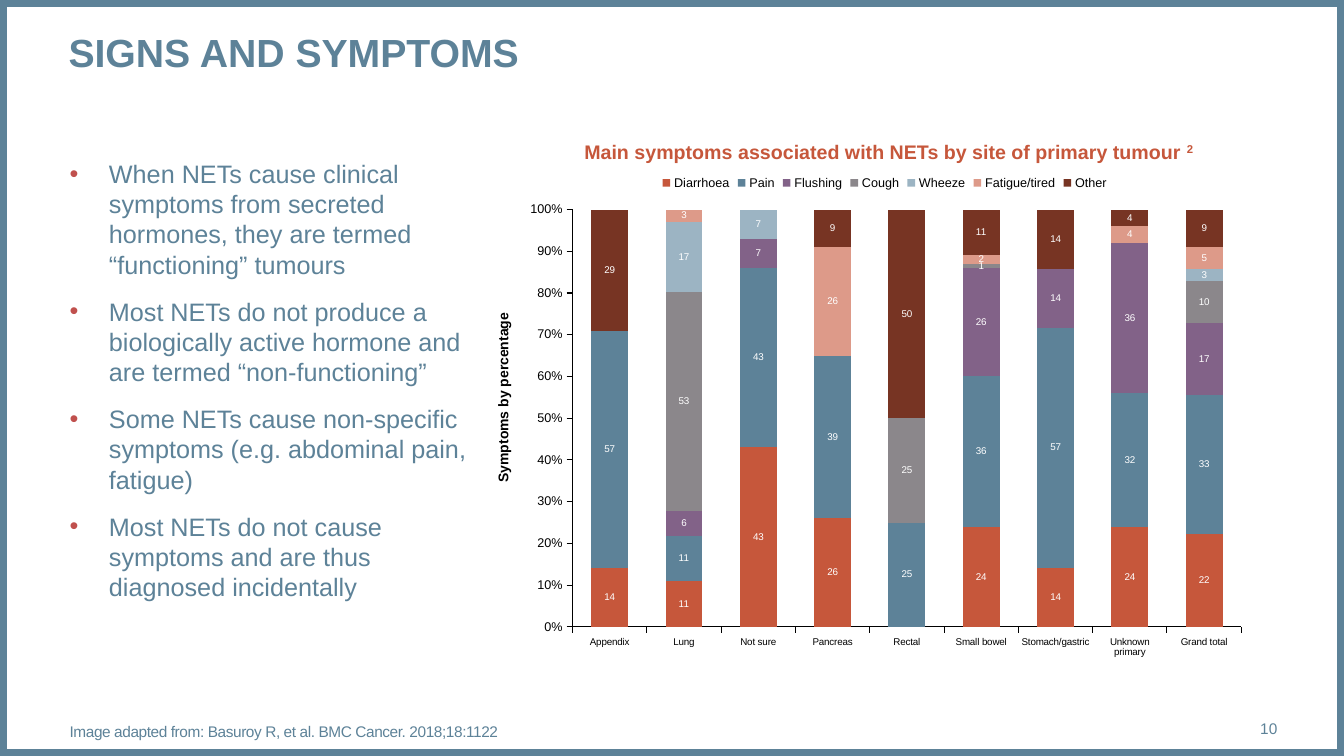
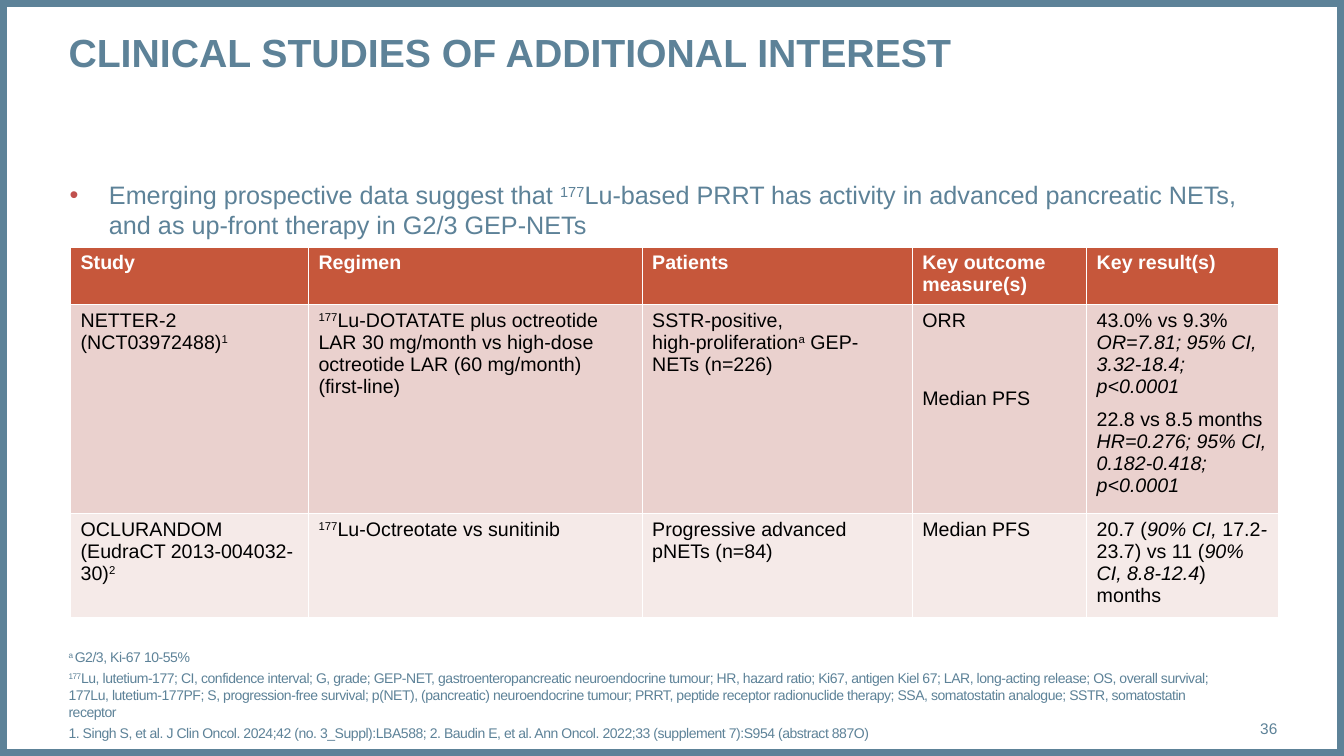
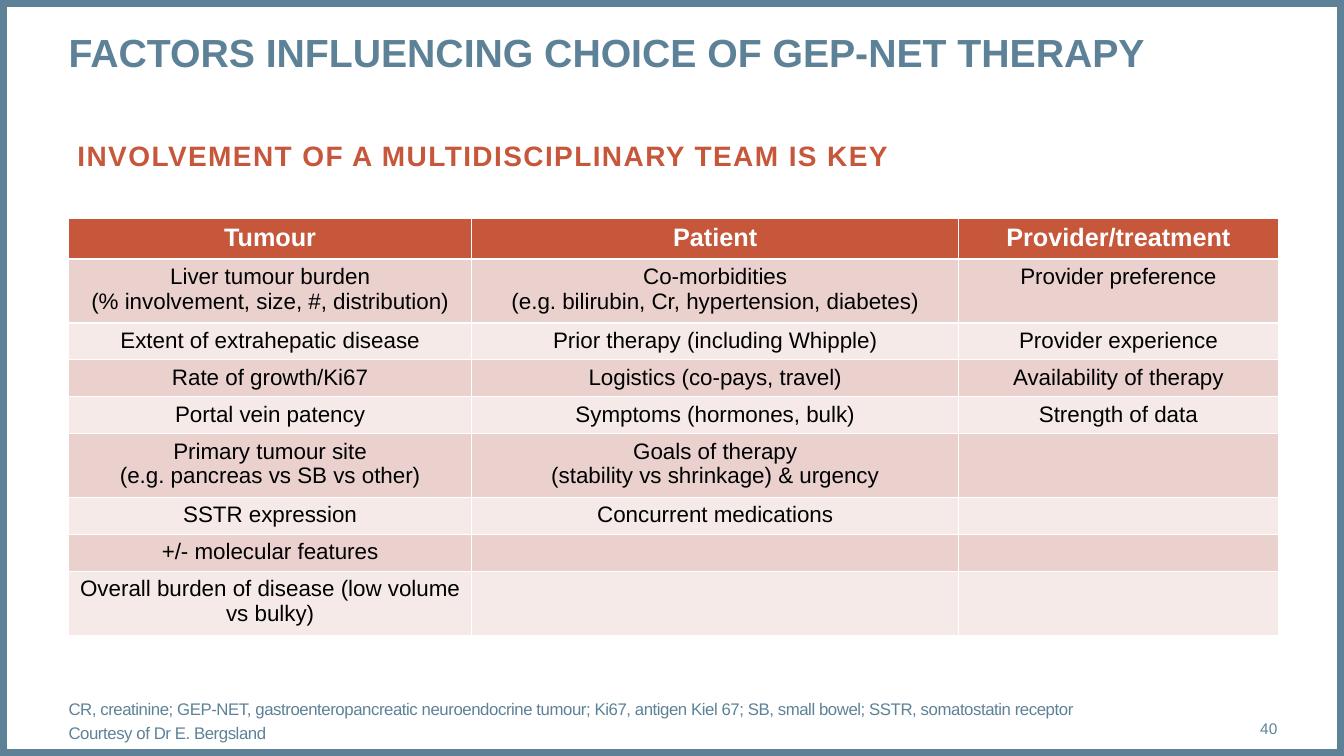
from copy import deepcopy
from lxml.etree import SubElement
from pptx import Presentation
from pptx.chart.data import CategoryChartData
from pptx.dml.color import RGBColor
from pptx.enum.chart import XL_CHART_TYPE as ChartType, XL_LABEL_POSITION as LabelPosition
from pptx.enum.chart import XL_LEGEND_POSITION as LegendPosition, XL_TICK_MARK as TickMark
from pptx.enum.shapes import MSO_SHAPE as Preset
from pptx.enum.text import MSO_ANCHOR as Anchor, MSO_AUTO_SIZE as AutoSize, PP_ALIGN as Align
from pptx.oxml.ns import qn
from pptx.util import Inches, Pt

COLORS = {
    "slate": "5D8298", "rust": "C6573B", "bullet": "C0504D", "black": "000000", "white": "FFFFFF",
    "band": "EAD1CE", "pale": "F5EAE8", "purple": "826288", "gray": "8B878B", "sky": "9CB4C3",
    "salmon": "DD9A89", "brown": "773423",
}
RGB = {name: RGBColor.from_string(value) for name, value in COLORS.items()}
FONT = "Arial"

presentation = Presentation()
presentation.slide_width, presentation.slide_height = Inches(13.33), Inches(7.5)
COLUMN = presentation.slide_width / 100
ROW = presentation.slide_height / 100


def place(left, top, width, height):
    return [round(value) for value in (left * COLUMN, top * ROW, width * COLUMN, height * ROW)]


def write(frame, text, size, color="slate", bold=False, align=Align.LEFT, before=0, tracking=0, bullet=False):
    for index, line in enumerate(text.split("\n")):
        paragraph = frame.paragraphs[0] if index == 0 else frame.add_paragraph()
        paragraph.alignment = align
        paragraph.space_before = Pt(before if index else 0)
        if bullet:
            properties = paragraph._p.get_or_add_pPr()
            properties.set("marL", str(Inches(0.39)))
            properties.set("indent", str(-Inches(0.39)))
            tint = SubElement(properties, qn("a:buClr"))
            SubElement(tint, qn("a:srgbClr")).set("val", COLORS["bullet"])
            SubElement(properties, qn("a:buFont")).set("typeface", FONT)
            SubElement(properties, qn("a:buChar")).set("char", "•")
        for raised, part in enumerate(line.split("^")):
            for slanted, piece in enumerate(part.split("~")):
                for row, words in enumerate(piece.split("\v")):
                    if row:
                        paragraph.add_line_break()
                    if not words:
                        continue
                    run = paragraph.add_run()
                    run.text = words
                    values = {"name": FONT, "size": Pt(size), "bold": bold, "italic": slanted % 2 == 1}
                    for name, value in values.items():
                        setattr(run.font, name, value)
                    run.font.color.rgb = RGB[color]
                    if raised % 2:
                        run.font._element.set("baseline", "30000")
                    if tracking:
                        run.font._element.set("spc", str(round(tracking * 100)))
        for line_break in paragraph._p.findall(qn("a:br")):
            line_break.append(deepcopy(paragraph.runs[0].font._element))
        paragraph._p.get_or_add_endParaRPr().set("sz", str(size * 100))


layout = presentation.slide_layouts[5]
pages = [
    ("SIGNS AND SYMPTOMS", "10"),
    ("CLINICAL STUDIES OF ADDITIONAL INTEREST", "36"),
    ("FACTORS INFLUENCING CHOICE OF GEP-NET THERAPY", "40"),
]
slides = []
for heading, number in pages:
    slide = presentation.slides.add_slide(layout)
    slides.append(slide)
    title = slide.shapes.title
    title.left, title.top, title.width, title.height = place(5.1, 3.73, 89.95, 12.53)
    page_number = slide.shapes.add_textbox(*place(88.6, 93.73, 6.45, 5.33))
    for shape, anchor in ((title, Anchor.TOP), (page_number, Anchor.MIDDLE)):
        frame = shape.text_frame
        values = {"word_wrap": True, "auto_size": AutoSize.NONE, "vertical_anchor": anchor,
                  "margin_left": 0, "margin_top": 0, "margin_right": 0, "margin_bottom": 0}
        for name, value in values.items():
            setattr(frame, name, value)
    write(title.text_frame, heading, 28, bold=True)
    write(page_number.text_frame, number, 11, align=Align.RIGHT)

border = slides[0].shapes.add_shape(Preset.RECTANGLE, *place(0, 0, 100, 100))
border.shadow.inherit = False
border.fill.background()
border.line.color.rgb = RGB["slate"]
border.line.width = Pt(10)
layout.shapes.element.insert(2, border.element)

symptoms, studies, factors = slides

text_boxes = [
    (symptoms, (5.18, 20.93, 30.1, 66), Anchor.TOP, 0,
     "When NETs cause clinical symptoms from secreted hormones, they are termed “functioning” tumours\n"
     "Most NETs do not produce a biologically active hormone and are termed “non-functioning”\n"
     "Some NETs cause non-specific symptoms (e.g. abdominal pain, fatigue)\n"
     "Most NETs do not cause symptoms and are thus diagnosed incidentally",
     {"size": 18, "before": 12, "bullet": True}),
    (symptoms, (5.18, 92.67, 83.5, 5.33), Anchor.BOTTOM, 0,
     "Image adapted from: Basuroy R, et al. BMC Cancer. 2018;18:1122",
     {"size": 11, "tracking": -0.3}),
    (symptoms, (39.76, 17.87, 52.74, 4.53), Anchor.TOP, 1,
     "Main symptoms associated with NETs by site of primary tumour ^2^",
     {"size": 14, "color": "rust", "bold": True, "align": Align.CENTER}),
    (studies, (5.18, 23.73, 89.95, 8.5), Anchor.TOP, 0,
     "Emerging prospective data suggest that ^177^Lu-based PRRT has activity in advanced pancreatic NETs, "
     "and as up-front therapy in G2/3 GEP-NETs",
     {"size": 18, "bullet": True}),
    (studies, (5.1, 92.67, 85.67, 5.33), Anchor.BOTTOM, 0,
     "^a ^G2/3, Ki-67 10-55%\n"
     "^177^Lu, lutetium-177; CI, confidence interval; G, grade; GEP-NET, gastroenteropancreatic "
     "neuroendocrine tumour; HR, hazard ratio; Ki67, antigen Kiel 67; LAR, long-acting release; "
     "OS, overall survival; 177Lu, lutetium-177PF; S, progression-free survival; p(NET), (pancreatic) "
     "neuroendocrine tumour; PRRT, peptide receptor radionuclide therapy; SSA, somatostatin analogue; "
     "SSTR, somatostatin receptor\n"
     "1. Singh S, et al. J Clin Oncol. 2024;42 (no. 3_Suppl):LBA588; 2. Baudin E, et al. Ann Oncol. "
     "2022;33 (supplement 7):S954 (abstract 887O)",
     {"size": 10, "before": 3, "tracking": -0.3}),
    (factors, (5.03, 17.73, 90, 10.27), Anchor.TOP, 1,
     "INVOLVEMENT OF A MULTIDISCIPLINARY TEAM IS KEY",
     {"size": 20, "color": "rust", "bold": True, "tracking": 1}),
    (factors, (5.1, 92.67, 83.5, 5.33), Anchor.MIDDLE, 0,
     "CR, creatinine; GEP-NET, gastroenteropancreatic neuroendocrine tumour; Ki67, antigen Kiel 67; "
     "SB, small bowel; SSTR, somatostatin receptor\n"
     "Courtesy of Dr E. Bergsland",
     {"size": 12, "before": 3, "tracking": -0.3}),
]
for slide, area, anchor, padding, text, style in text_boxes:
    frame = slide.shapes.add_textbox(*place(*area)).text_frame
    frame.word_wrap = True
    frame.vertical_anchor = anchor
    frame.margin_left = frame.margin_right = Inches(0.1) * padding
    frame.margin_top = frame.margin_bottom = Inches(0.05) * padding
    write(frame, text, **style)

chart_data = CategoryChartData()
chart_data.categories = ["Appendix", "Lung", "Not sure", "Pancreas", "Rectal", "Small bowel",
                         "Stomach/gastric", "Unknown primary", "Grand total"]
symptom_series = [
    ("Diarrhoea", "rust", (14, 11, 43, 26, 0, 24, 14, 24, 22)),
    ("Pain", "slate", (57, 11, 43, 39, 25, 36, 57, 32, 33)),
    ("Flushing", "purple", (0, 6, 7, 0, 0, 26, 14, 36, 17)),
    ("Cough", "gray", (0, 53, 0, 0, 25, 1, 0, 0, 10)),
    ("Wheeze", "sky", (0, 17, 7, 0, 0, 0, 0, 0, 3)),
    ("Fatigue/tired", "salmon", (0, 3, 0, 26, 0, 2, 0, 4, 5)),
    ("Other", "brown", (29, 0, 0, 9, 50, 11, 14, 4, 9)),
]
for name, color, values in symptom_series:
    chart_data.add_series(name, values)
chart = symptoms.shapes.add_chart(
    ChartType.COLUMN_STACKED_100, *place(38.18, 21.73, 55.29, 66.53), chart_data).chart
chart.has_title = False
chart.has_legend = True
chart.legend.position = LegendPosition.TOP
chart.legend.include_in_layout = False
plot = chart.plots[0]
plot.gap_width, plot.overlap = 101, 100
plot.vary_by_categories = False
for series, (name, color, values) in zip(plot.series, symptom_series):
    series.format.fill.solid()
    series.format.fill.fore_color.rgb = RGB[color]
    labels = series.data_labels
    label_values = {"show_value": True, "position": LabelPosition.CENTER,
                    "number_format": "0;;;", "number_format_is_linked": False}
    for attribute, value in label_values.items():
        setattr(labels, attribute, value)
    labels.font.name, labels.font.size = FONT, Pt(7)
    labels.font.color.rgb = RGB["white"]

chart.value_axis.tick_labels.number_format = "0%"
chart.value_axis.tick_labels.number_format_is_linked = False
for axis, size in ((chart.category_axis, 7), (chart.value_axis, 9)):
    axis.has_major_gridlines = False
    axis.major_tick_mark = TickMark.OUTSIDE
    axis.minor_tick_mark = TickMark.NONE
    axis.format.line.color.rgb = RGB["black"]
    axis.format.line.width = Pt(0.75)
    axis.tick_labels.font.size = Pt(size)
chart.legend.font.size = Pt(9)
for font in (chart.font, chart.legend.font, chart.category_axis.tick_labels.font,
             chart.value_axis.tick_labels.font):
    font.name = FONT
    font.color.rgb = RGB["black"]

plot_area = chart.element.find(".//" + qn("c:plotArea"))
for old_layout in plot_area.findall(qn("c:layout")):
    plot_area.remove(old_layout)
plot_layout = SubElement(plot_area, qn("c:layout"))
plot_area.insert(0, plot_layout)
manual = SubElement(plot_layout, qn("c:manualLayout"))
plot_position = {"layoutTarget": "inner", "xMode": "edge", "yMode": "edge",
                 "x": 0.08, "y": 0.09, "w": 0.9, "h": 0.83}
for name, value in plot_position.items():
    SubElement(manual, qn("c:" + name)).set("val", str(value))

axis_title = symptoms.shapes.add_textbox(*place(30.3, 50.8, 14.25, 3.6))
axis_title.rotation = 270
axis_title.text_frame.word_wrap = False
write(axis_title.text_frame, "Symptoms by percentage", 10, "black", bold=True, align=Align.CENTER)

study_rows = [
    ["Study", "Regimen", "Patients", "Key outcome measure(s)", "Key result(s)"],
    ["NETTER-2 (NCT03972488)^1^",
     "^177^Lu-DOTATATE plus octreotide LAR 30 mg/month vs high-dose octreotide LAR (60 mg/month) (first-line)",
     "SSTR-positive,\vhigh-proliferation^a^ GEP-NETs (n=226)",
     "ORR\nMedian PFS",
     "43.0% vs 9.3%\n~OR=7.81; 95% CI,\v3.32-18.4; p<0.0001~\n"
     "22.8 vs 8.5 months\n~HR=0.276; 95% CI, 0.182-0.418; p<0.0001~"],
    ["OCLURANDOM\v(EudraCT 2013-004032-30)^2^", "^177^Lu-Octreotate vs sunitinib",
     "Progressive advanced pNETs (n=84)", "Median PFS",
     "20.7 (~90% CI, ~17.2~-~23.7) vs 11 (~90% CI, 8.8-12.4~) months"],
]
factor_rows = [
    ["Tumour", "Patient", "Provider/treatment"],
    ["Liver tumour burden\v(% involvement, size, #, distribution)",
     "Co-morbidities\v(e.g. bilirubin, Cr, hypertension, diabetes)", "Provider preference"],
    ["Extent of extrahepatic disease", "Prior therapy (including Whipple)", "Provider experience"],
    ["Rate of growth/Ki67", "Logistics (co-pays, travel)", "Availability of therapy"],
    ["Portal vein patency", "Symptoms (hormones, bulk)", "Strength of data"],
    ["Primary tumour site\v(e.g. pancreas vs SB vs other)",
     "Goals of therapy\v(stability vs shrinkage) & urgency", ""],
    ["SSTR expression", "Concurrent medications", ""],
    ["+/- molecular features", "", ""],
    ["Overall burden of disease (low volume vs bulky)", "", ""],
]
table_plans = [
    (studies, (5.25, 32.67), (17.7, 24.83, 20.1, 12.98, 14.25), (7.07, 26, 13),
     study_rows, 14, 14, Align.LEFT),
    (factors, (5.1, 28.93), (30, 36.23, 23.78), (5, 7.9, 4.6, 4.6, 4.6, 7.9, 4.6, 4.6, 7.9),
     factor_rows, 18, 16, Align.CENTER),
]
tables = []
for slide, corner, widths, heights, rows, header_size, body_size, align in table_plans:
    area = place(*corner, sum(widths), sum(heights))
    table = slide.shapes.add_table(len(heights), len(widths), *area).table
    tables.append(table)
    for column, width in zip(table.columns, widths):
        column.width = round(width * COLUMN)
    for row_index, (row, height, texts) in enumerate(zip(table.rows, heights, rows)):
        row.height = round(height * ROW)
        header = row_index == 0
        fill = "rust" if header else ("pale", "band")[row_index % 2]
        for cell, text in zip(row.cells, texts):
            cell.fill.solid()
            cell.fill.fore_color.rgb = RGB[fill]
            write(cell.text_frame, text, header_size if header else body_size,
                  "white" if header else "black", bold=header, align=align)

for column_index, paragraph_index, gap in ((3, 1, 40), (4, 2, 8)):
    cell = tables[0].cell(1, column_index)
    cell.text_frame.paragraphs[paragraph_index].space_before = Pt(gap)

presentation.save("out.pptx")
